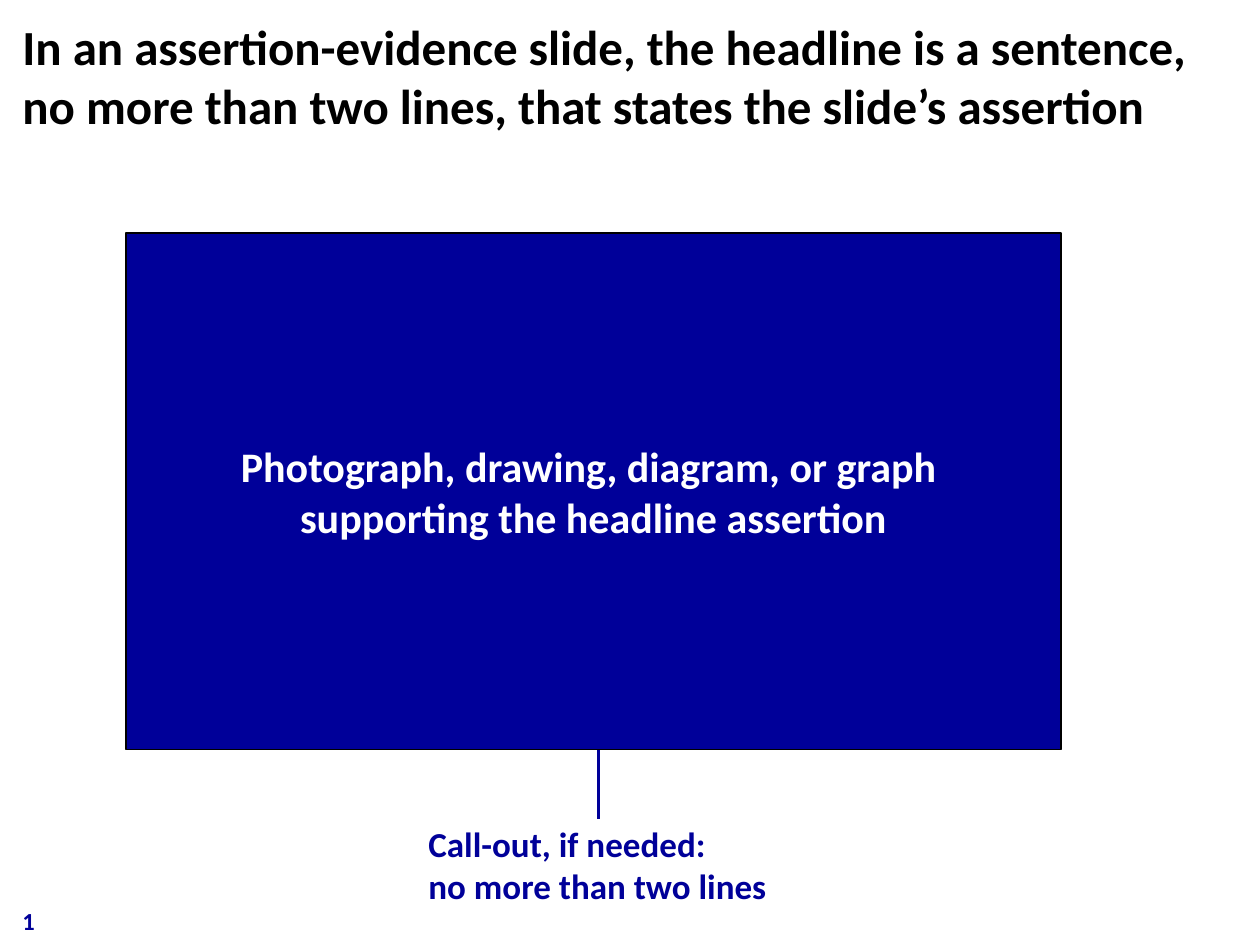
from dataclasses import dataclass

from lxml.etree import SubElement
from pptx import Presentation
from pptx.dml.color import RGBColor as Color
from pptx.enum.shapes import MSO_CONNECTOR as Connector, MSO_SHAPE as Preset
from pptx.enum.text import MSO_ANCHOR as Anchor, PP_ALIGN as Align
from pptx.oxml.ns import qn
from pptx.util import Inches, Pt


@dataclass(frozen=True)
class Theme:
    font: str = "Calibri"
    navy: Color = Color(0x00, 0x00, 0x99)
    black: Color = Color(0, 0, 0)
    white: Color = Color(255, 255, 255)
    headline: int = 28
    evidence: int = 24
    callout: int = 20
    number: int = 14


THEME = Theme()


def set_text(shape, text, size, color, align=Align.LEFT, anchor=Anchor.TOP):
    frame = shape.text_frame
    frame.word_wrap = True
    frame.vertical_anchor = anchor
    paragraph = frame.paragraphs[0]
    paragraph.text = text
    paragraph.alignment = align
    font = paragraph.font
    font.name = THEME.font
    font.size = Pt(size)
    font.bold = True
    font.color.rgb = color
    return frame


def add_text(slide, box, text, size, color, anchor=Anchor.TOP):
    shape = slide.shapes.add_textbox(*map(Inches, box))
    return set_text(shape, text, size, color, anchor=anchor)


def add_evidence(slide, box, text):
    shape = slide.shapes.add_shape(Preset.RECTANGLE, *map(Inches, box))
    shape.shadow.inherit = False
    shape.fill.solid()
    shape.fill.fore_color.rgb = THEME.navy
    shape.line.color.rgb = THEME.black
    shape.line.width = Pt(0.75)
    set_text(shape, text, THEME.evidence, THEME.white, Align.CENTER, Anchor.MIDDLE)


def add_line(slide, start, end):
    line = slide.shapes.add_connector(
        Connector.STRAIGHT, *map(Inches, (*start, *end)))
    line.line.color.rgb = THEME.navy
    line.line.width = Pt(2.25)
    SubElement(line._element.spPr, qn("a:effectLst"))


def add_callout(slide, box, text):
    frame = add_text(slide, box, text, THEME.callout, THEME.navy)
    frame.margin_left = frame.margin_right = Inches(0.07)
    frame.margin_top = frame.margin_bottom = Inches(0.03)


def add_number(slide, box, text):
    frame = add_text(slide, box, text, THEME.number, THEME.navy, Anchor.BOTTOM)
    frame.margin_bottom = 0


def main():
    presentation = Presentation()
    presentation.slide_width = Inches(10)
    presentation.slide_height = Inches(7.5)
    slide = presentation.slides.add_slide(presentation.slide_layouts[6])

    add_number(slide, (0.08, 6.9, 2.33, 0.52), "1")
    add_line(slide, (4.75, 5.83), (4.75, 6.5))
    add_evidence(
        slide, (1, 1.85, 7.42, 4.1),
        "Photograph, drawing, diagram, or graph \vsupporting the headline assertion")
    add_callout(
        slide, (3.33, 6.5, 2.92, 0.72),
        "Call-out, if needed: \vno more than two lines")
    add_text(
        slide, (0.08, 0.08, 9.85, 1.03),
        "In an assertion-evidence slide, the headline is a sentence, "
        "no more than two lines, that states the slide’s assertion",
        THEME.headline, THEME.black)

    presentation.save("out.pptx")


main()
